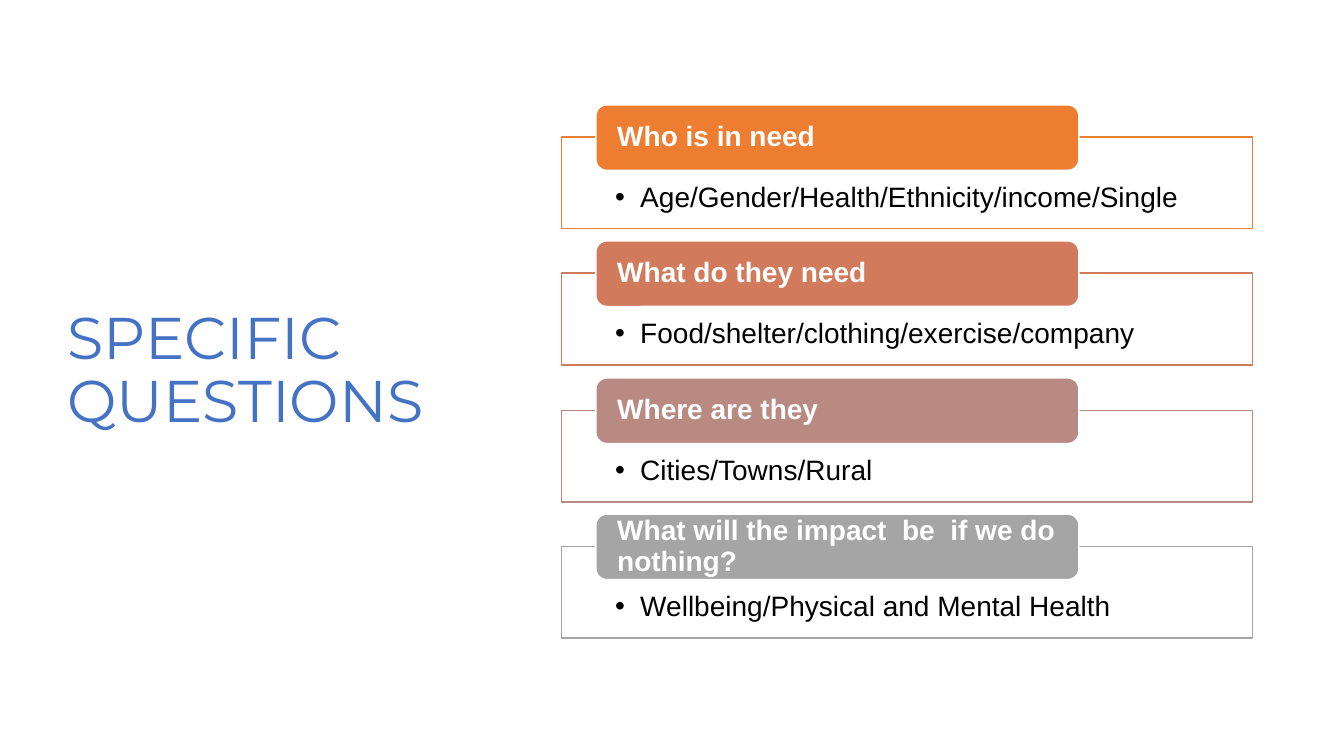
"""Build a slide that lists four specific questions beside its title."""
from lxml import etree
from pptx import Presentation, util as u
from pptx.dml.color import RGBColor
from pptx.enum import shapes, text
from pptx.oxml.ns import qn

PX = 9144
COLORS = {"title": "4472C4", "white": "FFFFFF", "black": "000000",
          "orange": "ED7D31", "copper": "D17B5C", "rose": "B98A82", "gray": "A5A5A5"}
QUESTIONS = [
    ("Who is in need", "Age/Gender/Health/Ethnicity/income/Single", "orange"),
    ("What do they need", "Food/shelter/clothing/exercise/company", "copper"),
    ("Where are they", "Cities/Towns/Rural", "rose"),
    ("What will the impact  be  if we do nothing?",
     "Wellbeing/Physical and Mental Health", "gray"),
]
FIRST_TOP, PITCH = 136, 135.4


def px(n):
    return u.Emu(n * PX)


def rgb(name):
    return RGBColor.from_string(COLORS[name])


def add_bullet(p, indent):
    pPr = p._p.get_or_add_pPr()
    pPr.set("marL", str(px(indent)))
    pPr.set("indent", str(-px(indent)))
    etree.SubElement(pPr, qn("a:buFont"), typeface="Arial")
    etree.SubElement(pPr, qn("a:buChar"), char="•")


def write(sp, words, *, size=20, font="Arial", color="black", bold=False,
          insets=(10, 5, 10, 5), anchor=text.MSO_ANCHOR.MIDDLE, bullet=0):
    tf = sp.text_frame
    tf.word_wrap = True
    tf.auto_size = text.MSO_AUTO_SIZE.NONE
    tf.vertical_anchor = anchor
    tf.margin_left, tf.margin_top, tf.margin_right, tf.margin_bottom = map(px, insets)
    p = tf.paragraphs[0]
    if bullet:
        add_bullet(p, bullet)
    p.alignment = text.PP_ALIGN.LEFT
    p.line_spacing = 0.9
    r = p.add_run()
    r.text = words
    r.font.size, r.font.name, r.font.bold = u.Pt(size), font, bold
    r.font.color.rgb = rgb(color)


def add_box(s, kind, box, fill, line, opacity=100):
    sp = s.shapes.add_shape(kind, *map(px, box))
    sp.shadow.inherit = False
    sp.fill.solid()
    sp.fill.fore_color.rgb = rgb(fill)
    if opacity < 100:
        clr = sp._element.spPr.find(qn("a:solidFill"))[0]
        etree.SubElement(clr, qn("a:alpha"), val=str(opacity * 1000))
    sp.line.color.rgb = rgb(line)
    sp.line.width = u.Pt(1)
    return sp


def add_question(s, top, heading, detail, color):
    frame = add_box(s, shapes.MSO_SHAPE.RECTANGLE, (557, top, 685, 91),
                    "white", color, opacity=90)
    write(frame, detail, insets=(53, 46, 53, 16),
          anchor=text.MSO_ANCHOR.TOP, bullet=25)
    tag = add_box(s, shapes.MSO_SHAPE.ROUNDED_RECTANGLE, (591, top - 32, 479, 65),
                  color, "white")
    write(tag, heading, color="white", bold=True, insets=(18, 0, 18, 0))


def add_title(s, words):
    sp = s.shapes.title
    sp.left, sp.top, sp.width, sp.height = map(px, (57, 68, 416, 602))
    write(sp, words, size=42, font="Montserrat", color="title")


def main():
    prs = Presentation()
    prs.slide_width, prs.slide_height = px(1333), px(750)
    s = prs.slides.add_slide(prs.slide_layouts[5])
    add_title(s, "SPECIFIC QUESTIONS")
    for i, question in enumerate(QUESTIONS):
        add_question(s, FIRST_TOP + round(i * PITCH), *question)
    prs.save("out.pptx")


if __name__ == "__main__":
    main()
